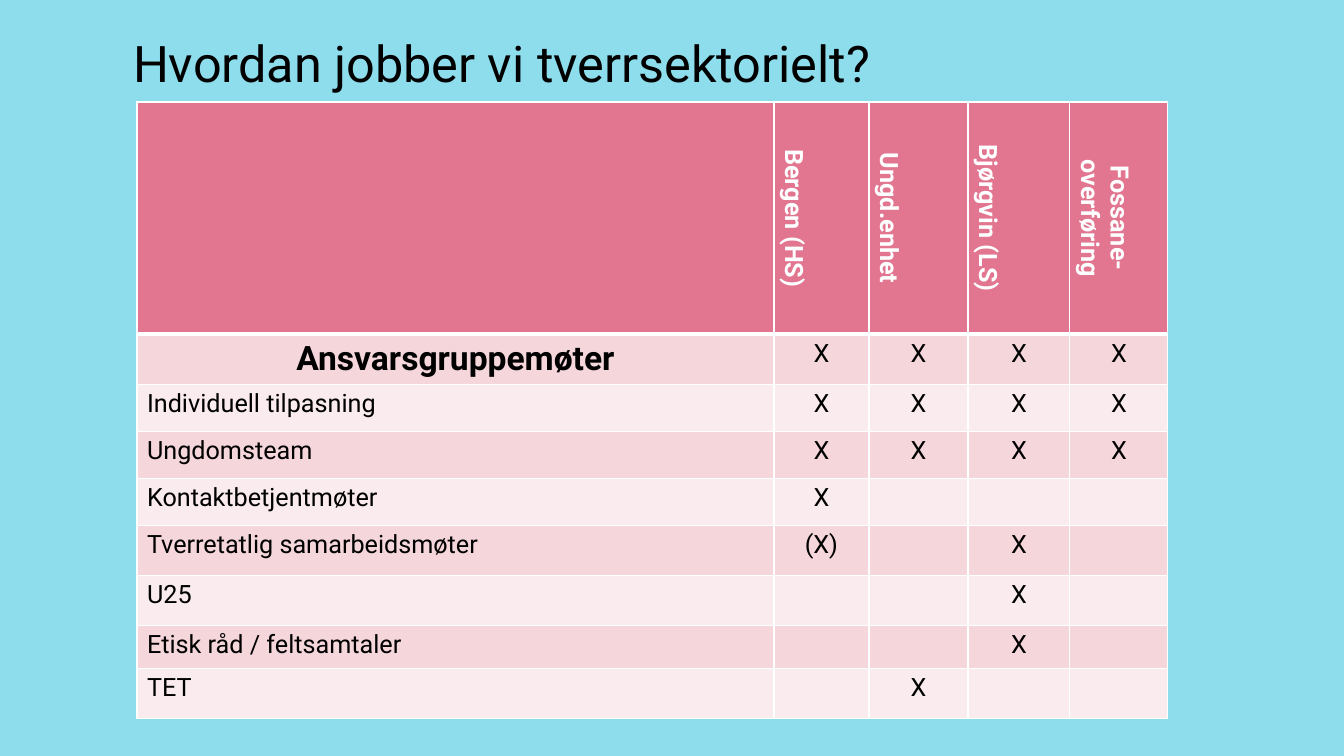
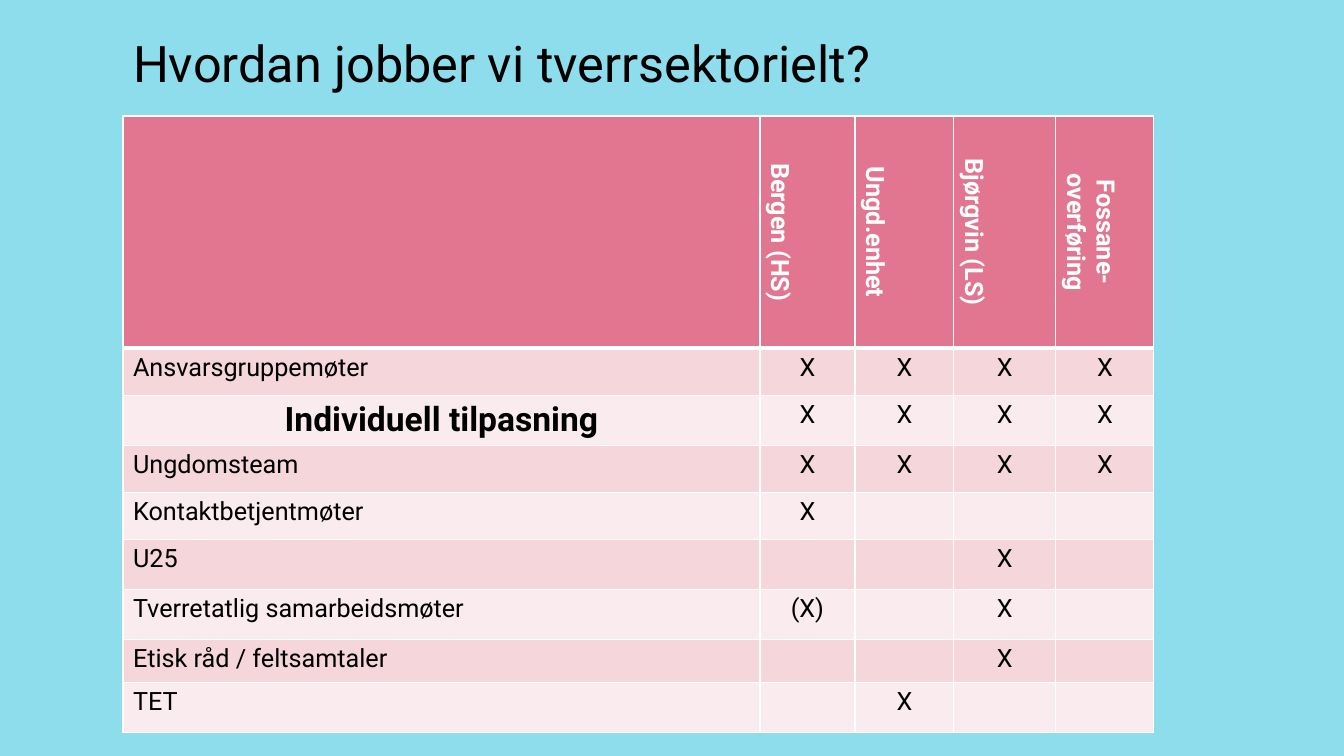
from lxml import etree
from pptx import Presentation
from pptx import util as u
from pptx.dml.color import RGBColor
from pptx.enum import text
from pptx.oxml import ns

PX = 914400 / 100.8
COLORS = {
    "background": "8EDDED",
    "header": "E2758F",
    "band_dark": "F4D6DB",
    "band_light": "FAECEE",
    "border": "FEFFFF",
    "light_text": "FEFFFF",
    "dark_text": "000000",
}
FONT = "Roboto"
TITLE = "Hvordan jobber vi tverrsektorielt?"
TITLE_BOX = (123, 34, 1058, 60)

HEADINGS = ["", "Bergen (HS)", "Ungd.enhet", "Bjørgvin (LS)", "Fossane-overføring"]
COLUMN_WIDTHS = [637, 95, 99, 102, 98]
HEADER_HEIGHT = 232
ROW_HEIGHTS = [47, 47, 47, 47, 50, 50, 43, 50]
FOCUS_HEIGHT = 50

MARKS = {
    "Ansvarsgruppemøter": ["X", "X", "X", "X"],
    "Individuell tilpasning": ["X", "X", "X", "X"],
    "Ungdomsteam": ["X", "X", "X", "X"],
    "Kontaktbetjentmøter": ["X", "", "", ""],
    "Tverretatlig samarbeidsmøter": ["(X)", "", "X", ""],
    "U25": ["", "", "X", ""],
    "Etisk råd / feltsamtaler": ["", "", "X", ""],
    "TET": ["", "X", "", ""],
}
FIRST_MEETINGS = list(MARKS)[:4]
LAST_MEETINGS = list(MARKS)[6:]
SLIDES = [
    {
        "focus": "Ansvarsgruppemøter",
        "middle": ["Tverretatlig samarbeidsmøter", "U25"],
        "corner": (137, 102),
    },
    {
        "focus": "Individuell tilpasning",
        "middle": ["U25", "Tverretatlig samarbeidsmøter"],
        "corner": (123, 116),
    },
]


def px(length):
    return u.Emu(round(length * PX))


def color(name):
    return RGBColor.from_string(COLORS[name])


def set_attributes(target, values):
    for name, value in values.items():
        setattr(target, name, value)


def write(paragraph, words, size, color_name, bold=False, align=text.PP_ALIGN.LEFT):
    paragraph.alignment = align
    if not words:
        paragraph.font.size = u.Pt(size)
        return
    run = paragraph.add_run()
    run.text = words
    set_attributes(run.font, {"name": FONT, "size": u.Pt(size), "bold": bold})
    run.font.color.rgb = color(color_name)


def add_title(slide):
    title = slide.shapes.title
    box = zip(("left", "top", "width", "height"), map(px, TITLE_BOX))
    set_attributes(title, dict(box))
    set_attributes(title.text_frame, {
        "word_wrap": True,
        "auto_size": text.MSO_AUTO_SIZE.NONE,
        "vertical_anchor": text.MSO_ANCHOR.TOP,
    })
    paragraph = title.text_frame.paragraphs[0]
    paragraph.line_spacing = 0.89
    write(paragraph, TITLE, 36, "dark_text")


def style_cell(cell, fill_name, top=1, bottom=1):
    properties = cell._tc.get_or_add_tcPr()
    for side, width in (("L", 1), ("R", 1), ("T", top), ("B", bottom)):
        line = etree.SubElement(properties, ns.qn(f"a:ln{side}"), w=str(u.Pt(width)))
        fill = etree.SubElement(line, ns.qn("a:solidFill"))
        etree.SubElement(fill, ns.qn("a:srgbClr"), val=COLORS["border"])
    cell.fill.solid()
    cell.fill.fore_color.rgb = color(fill_name)


def fill_header(table):
    for cell, heading in zip(table.rows[0].cells, HEADINGS):
        style_cell(cell, "header", bottom=3)
        if heading:
            cell._tc.get_or_add_tcPr().set("vert", "vert")
        write(cell.text_frame.paragraphs[0], heading, 18, "light_text",
              bold=True, align=text.PP_ALIGN.CENTER)


def fill_meeting(table, index, meeting, focused):
    band = "band_dark" if index % 2 else "band_light"
    for column, words in enumerate([meeting, *MARKS[meeting]]):
        cell = table.cell(index, column)
        style_cell(cell, band, top=3 if index == 1 else 1)
        emphasized = focused and column == 0
        centered = emphasized or column > 0
        write(cell.text_frame.paragraphs[0], words, 24 if emphasized else 18,
              "dark_text", bold=emphasized,
              align=text.PP_ALIGN.CENTER if centered else text.PP_ALIGN.LEFT)


def add_meeting_table(slide, focus, middle, corner):
    meetings = FIRST_MEETINGS + middle + LAST_MEETINGS
    heights = [HEADER_HEIGHT] + [
        FOCUS_HEIGHT if meeting == focus else height
        for meeting, height in zip(meetings, ROW_HEIGHTS)
    ]
    left, top = corner
    table = slide.shapes.add_table(
        len(heights), len(COLUMN_WIDTHS), px(left), px(top),
        px(sum(COLUMN_WIDTHS)), px(sum(heights)),
    ).table
    set_attributes(table, {"first_row": True, "horz_banding": False})
    for column, width in zip(table.columns, COLUMN_WIDTHS):
        column.width = px(width)
    for row, height in zip(table.rows, heights):
        row.height = px(height)
    fill_header(table)
    for index, meeting in enumerate(meetings, start=1):
        fill_meeting(table, index, meeting, meeting == focus)


def main():
    presentation = Presentation()
    set_attributes(presentation, {"slide_width": px(1344), "slide_height": px(756)})
    background = presentation.slide_master.background.fill
    background.solid()
    background.fore_color.rgb = color("background")
    title_only = presentation.slide_layouts.get_by_name("Title Only")
    for content in SLIDES:
        slide = presentation.slides.add_slide(title_only)
        add_title(slide)
        add_meeting_table(slide, **content)
    presentation.save("out.pptx")


if __name__ == "__main__":
    main()
